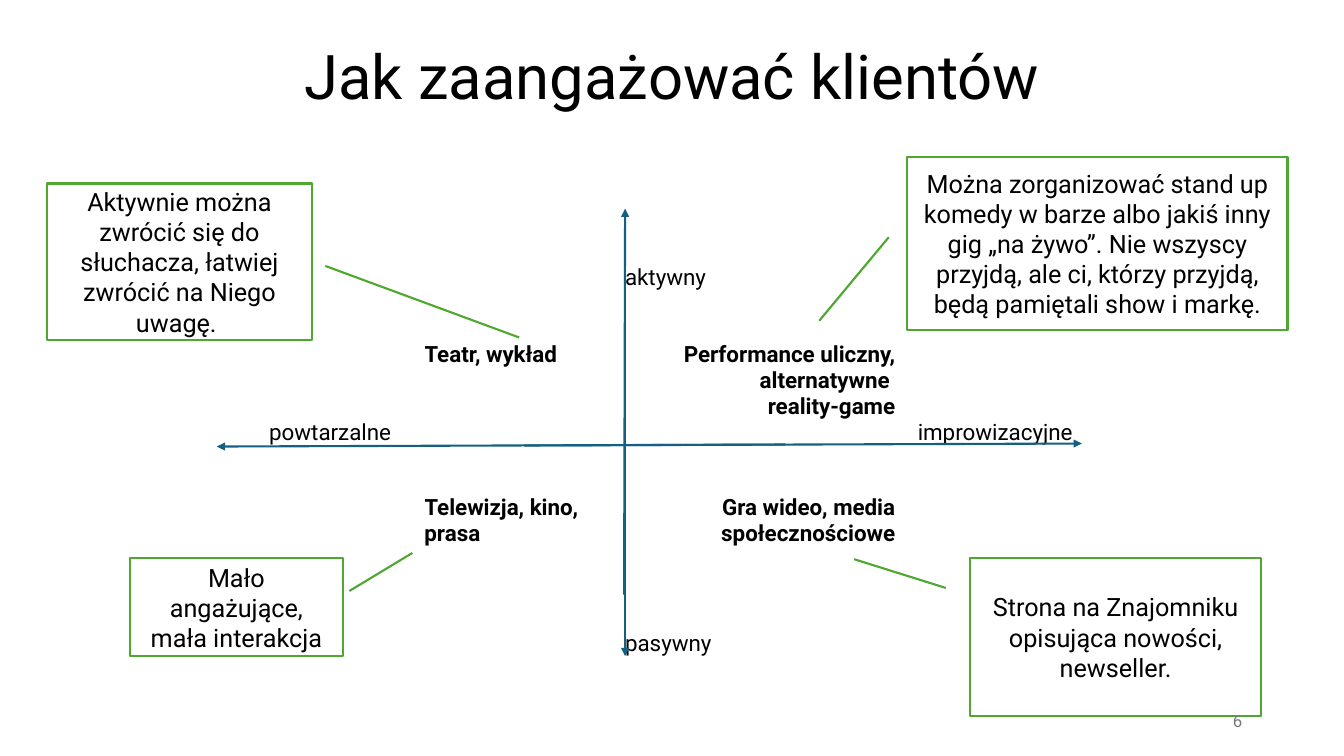
from lxml import etree
from pptx import Presentation
from pptx.dml.color import RGBColor
from pptx.enum.shapes import MSO_CONNECTOR, MSO_SHAPE
from pptx.enum.text import MSO_ANCHOR as ANC, PP_ALIGN as AL
from pptx.oxml.ns import qn
from pptx.util import Inches, Pt

WHITE = RGBColor(0xFF, 0xFF, 0xFF)
BLACK = RGBColor(0, 0, 0)
GREY = RGBColor(0x79, 0x79, 0x79)
BLUE = RGBColor(0x15, 0x60, 0x82)
GREEN = RGBColor(0x4E, 0xA7, 0x2E)


def write(tf, text, size, align, anchor=ANC.MIDDLE, bold=False, color=BLACK):
    tf.word_wrap = True
    tf.vertical_anchor = anchor
    p = tf.paragraphs[0]
    p.text = text
    p.alignment = align
    fmt = {"name": "Roboto", "size": Pt(size), "bold": bold}
    for r in p.runs:
        for name, value in fmt.items():
            setattr(r.font, name, value)
        r.font.color.rgb = color


prs = Presentation()
prs.slide_width, prs.slide_height = Inches(13.33), Inches(7.5)
slide = prs.slides.add_slide(prs.slide_layouts[5])

# Title
title = slide.shapes.title
title.left, title.top = Inches(0.92), Inches(0.4)
title.width, title.height = Inches(11.5), Inches(0.78)
write(title.text_frame, "Jak zaangażować klientów", 44, AL.CENTER)
title.text_frame.paragraphs[0].line_spacing = 0.9

# Matrix table
cols = [0.79, 1.54, 1.99, 2.68, 1.76]
rows = [0.97, 0.5, 1.03, 1.01, 0.5, 0.59]
table = slide.shapes.add_table(len(rows), len(cols), Inches(1.88), Inches(1.92),
                               Inches(sum(cols)), Inches(sum(rows))).table
table.first_row = table.horz_banding = False
for col, width in zip(table.columns, cols):
    col.width = Inches(width)
for row, height in zip(table.rows, rows):
    row.height = Inches(height)
for cell in table.iter_cells():
    cell.fill.solid()
    cell.fill.fore_color.rgb = WHITE

labels = [
    (0, 3, "aktywny", AL.LEFT, ANC.BOTTOM, False),
    (2, 1, "powtarzalne", AL.LEFT, ANC.BOTTOM, False),
    (2, 2, "Teatr, wykład", AL.LEFT, ANC.TOP, True),
    (2, 3, "Performance uliczny, alternatywne \nreality-game", AL.RIGHT, ANC.TOP, True),
    (2, 4, "improwizacyjne", AL.RIGHT, ANC.BOTTOM, False),
    (3, 2, "Telewizja, kino, prasa", AL.LEFT, ANC.BOTTOM, True),
    (3, 3, "Gra wideo, media społecznościowe", AL.RIGHT, ANC.BOTTOM, True),
    (5, 3, "pasywny", AL.LEFT, ANC.BOTTOM, False),
]
for row, col, text, align, anchor, bold in labels:
    cell = table.cell(row, col)
    write(cell.text_frame, text, 16, align, bold=bold)
    cell.vertical_anchor = anchor
    for side in ("left", "right", "top", "bottom"):
        setattr(cell, f"margin_{side}", 0)

# Axes: each half ends in an arrowhead
axes = slide.shapes.add_group_shape()
for ends in [(7.79, 4.41, 2.15, 4.43), (5.2, 4.42, 10.73, 4.4),
             (6.19, 5.9, 6.2, 2.07), (6.2, 3.18, 6.2, 6.51)]:
    axis = axes.shapes.add_connector(MSO_CONNECTOR.STRAIGHT, *map(Inches, ends))
    axis.line.color.rgb = BLUE
    axis.line.width = Pt(1.5)
    etree.SubElement(axis.line._get_or_add_ln(), qn("a:tailEnd"), type="triangle")
    etree.SubElement(axis._element.spPr, qn("a:effectLst"))

# Callouts with their pointer lines
callouts = [
    ((0.47, 1.82, 2.62, 1.55), (0.528, 1.052, 0.986, 1.786),
     "Aktywnie można zwrócić się do słuchacza, łatwiej zwrócić na Niego uwagę. "),
    ((1.29, 5.54, 2.11, 0.97), (0.333, 1.031, -0.056, 1.327),
     "Mało angażujące, mała interakcja"),
    ((9, 1.56, 3.77, 1.71), (0.464, -0.049, 0.949, -0.232),
     "Można zorganizować stand up komedy w barze albo jakiś inny gig „na żywo”. "
     "Nie wszyscy przyjdą, ale ci, którzy przyjdą, będą pamiętali show i markę."),
    ((9.62, 5.54, 2.89, 1.56), (0.188, -0.083, 0.005, -0.398),
     "Strona na Znajomniku opisująca nowości, newseller."),
]
for box, pointer, text in callouts:
    sp = slide.shapes.add_shape(MSO_SHAPE.LINE_CALLOUT_1, *map(Inches, box))
    for i, value in enumerate(pointer):
        sp.adjustments[i] = value
    sp.shadow.inherit = False
    sp.fill.solid()
    sp.fill.fore_color.rgb = WHITE
    sp.line.color.rgb = GREEN
    sp.line.width = Pt(1.5)
    write(sp.text_frame, text, 18, AL.CENTER)

# Slide number
number = slide.shapes.add_textbox(Inches(9.42), Inches(6.95), Inches(3), Inches(0.4))
write(number.text_frame, "6", 12, AL.RIGHT, color=GREY)

prs.save("out.pptx")
